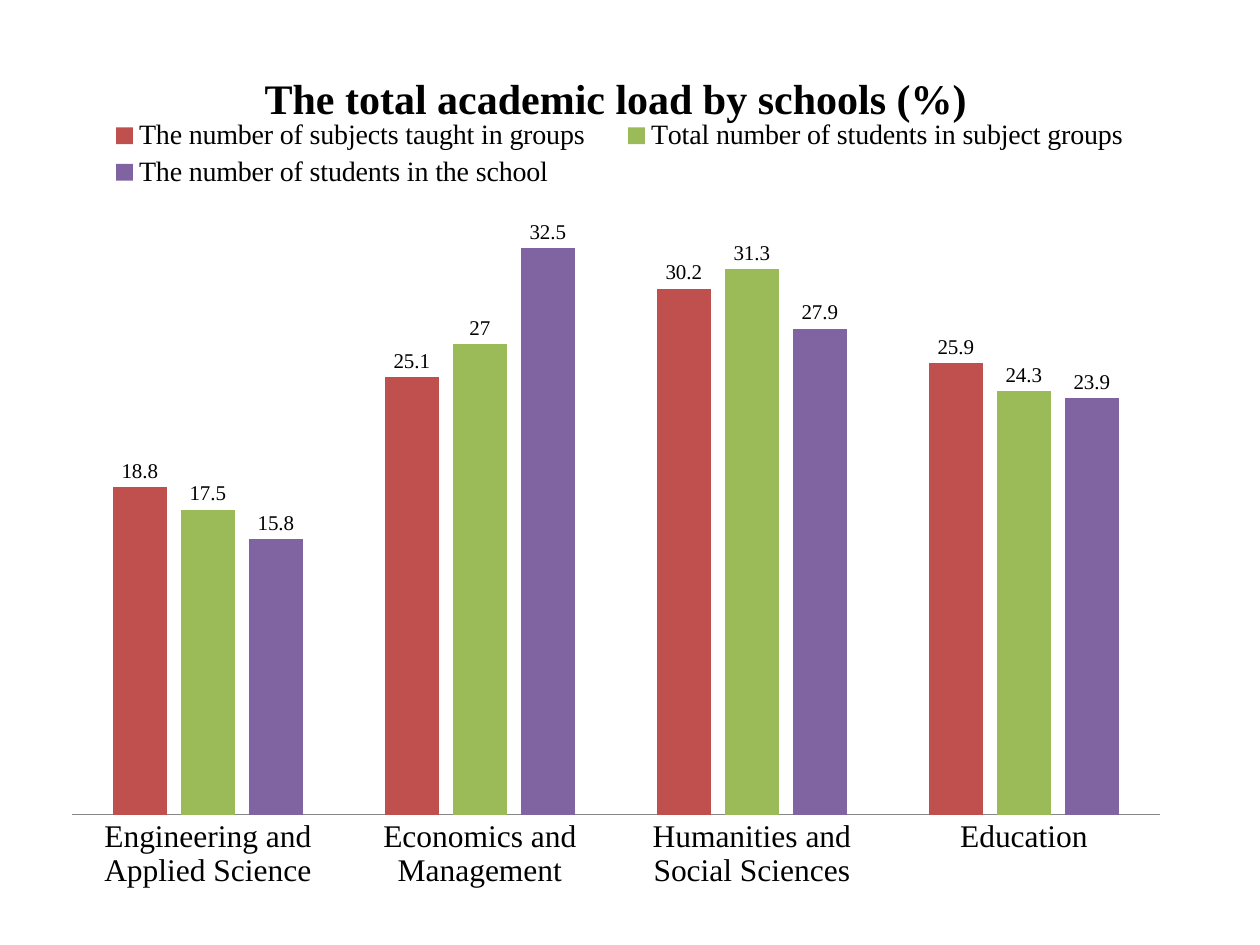
from lxml import etree
from pptx import Presentation
from pptx.chart.data import CategoryChartData
from pptx.dml.color import RGBColor
from pptx.enum.chart import (
    XL_CHART_TYPE as ChartType,
    XL_LABEL_POSITION as LabelPos,
    XL_LEGEND_POSITION as LegendPos,
    XL_TICK_MARK as TickMark,
)
from pptx.oxml.ns import qn
from pptx.util import Emu, Pt

PX_PER_INCH = 126
FONT = "Times New Roman"
BLACK = RGBColor(0x00, 0x00, 0x00)
GRAY = RGBColor(0x86, 0x86, 0x86)
RED = RGBColor(0xC0, 0x50, 0x4D)
GREEN = RGBColor(0x9B, 0xBB, 0x59)
PURPLE = RGBColor(0x80, 0x64, 0xA2)

SCHOOLS = [
    "Engineering and Applied Science",
    "Economics and Management",
    "Humanities and Social Sciences",
    "Education",
]
LOADS = [
    ("The number of subjects taught in groups", (18.8, 25.1, 30.2, 25.9), RED),
    ("Total number of students in subject groups", (17.5, 27, 31.3, 24.3), GREEN),
    ("The number of students in the school", (15.8, 32.5, 27.9, 23.9), PURPLE),
]


def px(n):
    return Emu(round(n * 914400 / PX_PER_INCH))


def set_font(font, size, bold=False, name=FONT, color=BLACK):
    font.name, font.size, font.bold = name, Pt(size), bold
    font.color.rgb = color


def write_text(tf, text, **fmt):
    r = tf.paragraphs[0].add_run()
    r.text = text
    set_font(r.font, **fmt)


def set_layout(parent, chart_size, box, after=None, inner=False):
    """Place a chart part at a px box (x, y[, w, h]) within the chart."""
    layout = parent.find(qn("c:layout"))
    if layout is None:
        layout = etree.Element(qn("c:layout"))
        index = 0 if after is None else parent.index(parent.find(qn(after))) + 1
        parent.insert(index, layout)
    for child in list(layout):
        layout.remove(child)
    manual = etree.SubElement(layout, qn("c:manualLayout"))
    settings = {"layoutTarget": "inner"} if inner else {}
    settings.update(xMode="edge", yMode="edge")
    for tag, length, whole in zip("xywh", box, chart_size * 2):
        settings[tag] = length / whole
    for tag, value in settings.items():
        etree.SubElement(manual, qn(f"c:{tag}")).set("val", str(value))


def add_load_chart(s, x, y, w, h):
    data = CategoryChartData()
    data.categories = SCHOOLS
    for name, values, _ in LOADS:
        data.add_series(name, values)
    chart = s.shapes.add_chart(
        ChartType.COLUMN_CLUSTERED, px(x), px(y), px(w), px(h), data
    ).chart
    set_font(chart.font, 10, name="Calibri")

    # Title and legend
    chart.has_title = True
    write_text(chart.chart_title.text_frame,
               "The total academic load by schools (%)", size=24, bold=True)
    chart.has_legend = True
    legend = chart.legend
    legend.position = LegendPos.TOP
    legend.include_in_layout = False
    set_font(legend.font, 16)

    # Columns and their values
    plot = chart.plots[0]
    plot.gap_width, plot.overlap = 150, -25
    plot.vary_by_categories = False
    for series, (_, _, color) in zip(plot.series, LOADS):
        series.format.fill.solid()
        series.format.fill.fore_color.rgb = color
        labels = series.data_labels
        labels.show_value = True
        labels.position = LabelPos.OUTSIDE_END
        set_font(labels.font, 12)

    # Axes
    schools = chart.category_axis
    schools.major_tick_mark = schools.minor_tick_mark = TickMark.NONE
    schools.format.line.color.rgb = GRAY
    schools.format.line.width = Pt(0.75)
    set_font(schools.tick_labels.font, 18)
    percent = chart.value_axis
    percent.minimum_scale, percent.maximum_scale = 0, 35
    percent.has_major_gridlines = False
    percent.visible = False

    # Places within the chart
    root = chart.element.find(qn("c:chart"))
    set_layout(root.find(qn("c:title")), (w, h), (208, 25), after="c:tx")
    set_layout(root.find(qn("c:legend")), (w, h), (33, 76, 1075, 78),
               after="c:legendPos")
    set_layout(root.find(qn("c:plotArea")), (w, h), (23, 166, 1088, 610),
               inner=True)


def main():
    prs = Presentation()
    prs.slide_width, prs.slide_height = px(1260), px(945)
    s = prs.slides.add_slide(prs.slide_layouts[6])
    add_load_chart(s, 49, 39, 1134, 867)
    prs.save("out.pptx")


if __name__ == "__main__":
    main()
